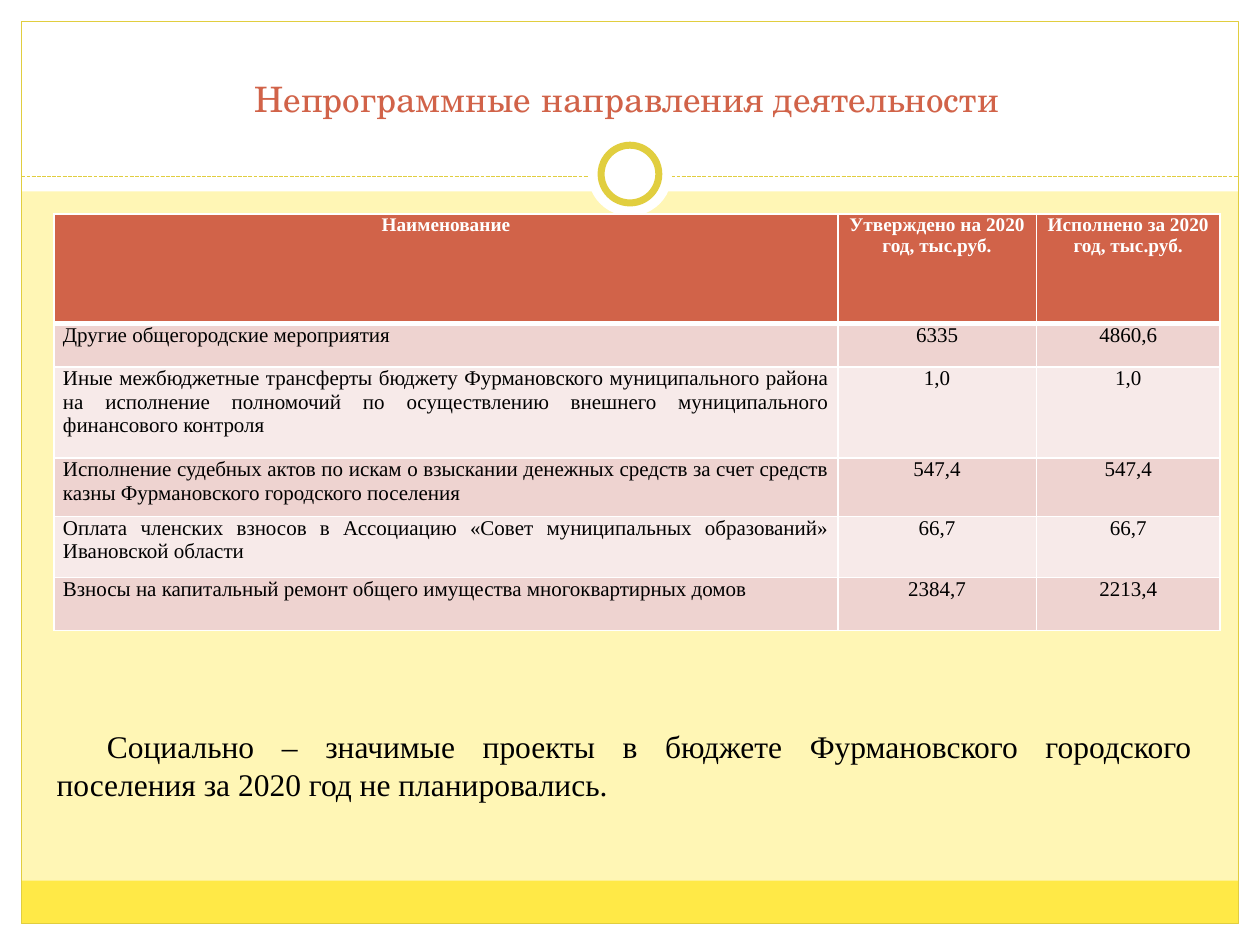
"""Builds the slide on non-programme spending with its table and closing note."""
from dataclasses import dataclass
from typing import Optional

from lxml.etree import SubElement
from pptx import Presentation
from pptx.dml.color import RGBColor
from pptx.enum.dml import MSO_LINE
from pptx.enum.shapes import MSO_CONNECTOR, MSO_SHAPE
from pptx.enum.text import MSO_ANCHOR, PP_ALIGN
from pptx.oxml.ns import qn
from pptx.slide import Slide
from pptx.table import _Cell
from pptx.text.text import _Paragraph
from pptx.util import Pt


@dataclass(frozen=True)
class Theme:
    background: str = "FFF6B5"
    white: str = "FFFFFF"
    footer: str = "FFE947"
    gold: str = "E1CE3F"
    accent: str = "D16349"
    text: str = "000000"
    bands: tuple[str, str] = ("EED3D0", "F7EAE9")
    title_font: str = "TeX Gyre Schola"
    body_font: str = "Times New Roman"
    title_size: float = 20
    note_size: float = 18
    header_size: float = 11
    cell_size: float = 12


@dataclass(frozen=True)
class Box:
    left: float
    top: float
    width: float
    height: float

    def lengths(self) -> tuple[Pt, Pt, Pt, Pt]:
        return Pt(self.left), Pt(self.top), Pt(self.width), Pt(self.height)


@dataclass(frozen=True)
class Panel:
    box: Box
    fill: Optional[str] = None
    line: Optional[str] = None
    weight: float = 0.75
    kind: MSO_SHAPE = MSO_SHAPE.RECTANGLE


@dataclass(frozen=True)
class TextStyle:
    font: str
    size: float
    color: str
    align: PP_ALIGN
    bold: bool = False


THEME = Theme()
WIDTH, HEIGHT, MARGIN = 720, 540, 12.24
INNER_WIDTH, INNER_HEIGHT = WIDTH - 2 * MARGIN, HEIGHT - 2 * MARGIN
DIVIDER_TOP = 100.8
RING_CENTER = (360, 99.5)

COLUMN_WIDTHS = (447.84, 113.4, 105.12)
ROW_HEIGHTS = (62.64, 24.8, 52, 33.3, 34.9, 30.2)
ROWS = (
    ("Наименование", "Утверждено на 2020 год, тыс.руб.", "Исполнено за 2020 год, тыс.руб."),
    ("Другие общегородские мероприятия", "6335", "4860,6"),
    ("Иные межбюджетные трансферты бюджету Фурмановского муниципального района на исполнение "
     "полномочий по осуществлению внешнего муниципального финансового контроля", "1,0", "1,0"),
    ("Исполнение судебных актов по искам о взыскании денежных средств за счет средств казны "
     "Фурмановского городского поселения", "547,4", "547,4"),
    ("Оплата членских взносов в Ассоциацию «Совет муниципальных образований» Ивановской области",
     "66,7", "66,7"),
    ("Взносы на капитальный ремонт общего имущества многоквартирных домов", "2384,7", "2213,4"),
)


def circle(diameter: float, line: Optional[str] = None, weight: float = 0.75) -> Panel:
    x, y = RING_CENTER
    box = Box(x - diameter / 2, y - diameter / 2, diameter, diameter)
    return Panel(box, THEME.white, line, weight, MSO_SHAPE.OVAL)


PANELS = (
    Panel(Box(0, HEIGHT - MARGIN, WIDTH, MARGIN), THEME.white),
    Panel(Box(0, 0, WIDTH, 109.44), THEME.white),
    Panel(Box(0, 0, MARGIN, HEIGHT), THEME.white),
    Panel(Box(WIDTH - MARGIN, 0, MARGIN, HEIGHT), THEME.white),
    Panel(Box(MARGIN, 503.28, INNER_WIDTH, 24.48), THEME.footer),
    Panel(Box(MARGIN, MARGIN, INNER_WIDTH, INNER_HEIGHT), line=THEME.gold),
)
RING = (circle(48), circle(33, THEME.gold, 4))


def color(value: str) -> RGBColor:
    return RGBColor.from_string(value)


def draw_panel(slide: Slide, panel: Panel) -> None:
    shape = slide.shapes.add_shape(panel.kind, *panel.box.lengths())
    shape.shadow.inherit = False
    if panel.fill:
        shape.fill.solid()
        shape.fill.fore_color.rgb = color(panel.fill)
    else:
        shape.fill.background()
    if panel.line:
        shape.line.color.rgb = color(panel.line)
        shape.line.width = Pt(panel.weight)
    else:
        shape.line.fill.background()


def draw_divider(slide: Slide) -> None:
    connector = slide.shapes.add_connector(
        MSO_CONNECTOR.STRAIGHT, Pt(MARGIN), Pt(DIVIDER_TOP), Pt(WIDTH - MARGIN), Pt(DIVIDER_TOP))
    connector.line.color.rgb = color(THEME.gold)
    connector.line.width = Pt(0.75)
    connector.line.dash_style = MSO_LINE.SQUARE_DOT
    SubElement(connector._element.spPr, qn("a:effectLst"))


def write(paragraph: _Paragraph, text: str, style: TextStyle) -> None:
    paragraph.text = text
    paragraph.alignment = style.align
    font = paragraph.font
    font.name, font.size, font.bold = style.font, Pt(style.size), style.bold
    font.color.rgb = color(style.color)


def draw_text(slide: Slide, box: Box, text: str, style: TextStyle,
              anchor: MSO_ANCHOR = MSO_ANCHOR.TOP, indent: float = 0) -> None:
    frame = slide.shapes.add_textbox(*box.lengths()).text_frame
    frame.word_wrap = True
    frame.vertical_anchor = anchor
    paragraph = frame.paragraphs[0]
    write(paragraph, text, style)
    if indent:
        paragraph._p.get_or_add_pPr().set("indent", str(Pt(indent)))


def set_borders(cell: _Cell, widths: dict[str, float]) -> None:
    properties = cell._tc.get_or_add_tcPr()
    for position, (side, width) in enumerate(widths.items()):
        border = properties.makeelement(qn(f"a:{side}"), {"w": str(Pt(width))})
        fill = SubElement(border, qn("a:solidFill"))
        SubElement(fill, qn("a:srgbClr"), val=THEME.white)
        properties.insert(position, border)


def draw_table(slide: Slide) -> None:
    box = Box(30.96, 122.4, sum(COLUMN_WIDTHS), sum(ROW_HEIGHTS))
    table = slide.shapes.add_table(len(ROWS), len(COLUMN_WIDTHS), *box.lengths()).table
    for column, width in zip(table.columns, COLUMN_WIDTHS):
        column.width = Pt(width)
    for row_index, (height, texts) in enumerate(zip(ROW_HEIGHTS, ROWS)):
        table.rows[row_index].height = Pt(height)
        header = row_index == 0
        for column_index, text in enumerate(texts):
            cell = table.cell(row_index, column_index)
            cell.margin_left = cell.margin_right = Pt(5.04)
            cell.margin_top = cell.margin_bottom = Pt(0)
            cell.fill.solid()
            cell.fill.fore_color.rgb = color(
                THEME.accent if header else THEME.bands[(row_index - 1) % 2])
            align = PP_ALIGN.CENTER if header or column_index else PP_ALIGN.JUSTIFY
            style = TextStyle(THEME.body_font,
                              THEME.header_size if header else THEME.cell_size,
                              THEME.white if header else THEME.text, align, header)
            write(cell.text_frame.paragraphs[0], text, style)
            set_borders(cell, {"lnL": 1, "lnR": 1, "lnT": 3 if row_index == 1 else 1,
                               "lnB": 3 if header else 1})


def main() -> None:
    presentation = Presentation()
    presentation.slide_width, presentation.slide_height = Pt(WIDTH), Pt(HEIGHT)
    slide = presentation.slides.add_slide(presentation.slide_layouts[6])
    slide.background.fill.solid()
    slide.background.fill.fore_color.rgb = color(THEME.background)
    for panel in PANELS:
        draw_panel(slide, panel)
    draw_divider(slide)
    for panel in RING:
        draw_panel(slide, panel)
    draw_table(slide)
    draw_text(slide, Box(22.32, 33.84, 671.76, 38.16), "Непрограммные направления деятельности",
              TextStyle(THEME.title_font, THEME.title_size, THEME.accent, PP_ALIGN.CENTER),
              MSO_ANCHOR.BOTTOM)
    draw_text(slide, Box(25.2, 411.84, 663.12, 51.12),
              "Социально – значимые проекты в бюджете Фурмановского городского поселения "
              "за 2020 год не планировались.",
              TextStyle(THEME.body_font, THEME.note_size, THEME.text, PP_ALIGN.JUSTIFY), indent=28.8)
    presentation.save("out.pptx")


if __name__ == "__main__":
    main()
